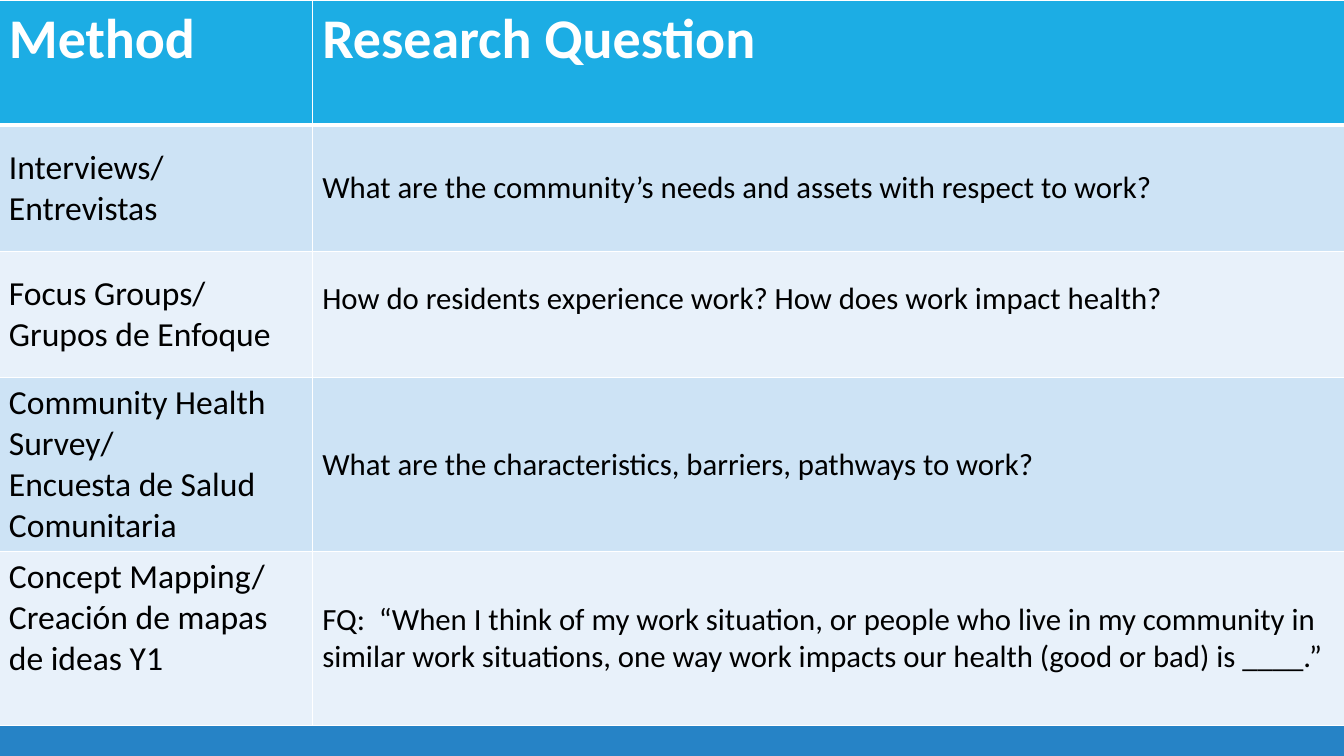
from pptx import Presentation
from pptx.dml.color import RGBColor
from pptx.enum.shapes import MSO_SHAPE
from pptx.enum.text import MSO_ANCHOR
from pptx.oxml.ns import qn
from pptx.util import Cm, Pt
from lxml import etree

RECTANGLE = MSO_SHAPE.RECTANGLE
TOP, MIDDLE = MSO_ANCHOR.TOP, MSO_ANCHOR.MIDDLE

# Content: method and research question
HEADINGS = ("Method", "Research Question")
STUDIES = [
    ("Interviews/\nEntrevistas",
     "What are the community’s needs and assets with respect to work?"),
    ("Focus Groups/\nGrupos de Enfoque",
     "How do residents experience work? How does work impact health?"),
    ("Community Health Survey/\nEncuesta de Salud Comunitaria",
     "What are the characteristics, barriers, pathways to work?"),
    ("Concept Mapping/\nCreación de mapas de ideas Y1",
     "FQ:  “When I think of my work situation, or people who live in my "
     "community in similar work situations, one way work impacts our health "
     "(good or bad) is ____.”"),
]

# Layout and style
SLIDE_WIDTH, SLIDE_HEIGHT = 33.87, 19.05
FOOTER_HEIGHT = 1.27
TABLE_LEFT = -0.03
COLUMN_WIDTHS = (7.9, 26.04)
ROW_HEIGHTS = (3.15, 3.18, 3.18, 4.39, 4.39)
RAISED_CELLS = {(2, 1): 0.92, (4, 0): 1.16}  # bottom margins that lift the text
FONT = "Calibri"
HEADING_SIZE, BODY_SIZES = 40, (24, 22)
WHITE, BLACK = "FFFFFF", "000000"
HEADING_FILL, FOOTER_FILL = "1CADE4", "2683C6"
BAND_FILLS = ("CDE3F5", "E8F1FA")


def paint(fill, color):
    fill.solid()
    fill.fore_color.rgb = RGBColor.from_string(color)


def set_borders(cell, bottom_width):
    properties = cell._tc.get_or_add_tcPr()
    widths = {"a:lnL": 1, "a:lnR": 1, "a:lnT": 1, "a:lnB": bottom_width}
    for position, (tag, width) in enumerate(widths.items()):
        line = etree.Element(qn(tag), w=str(Pt(width)))
        solid = etree.SubElement(line, qn("a:solidFill"))
        etree.SubElement(solid, qn("a:srgbClr"), val=WHITE)
        properties.insert(position, line)


def fill_cell(cell, text, size, color, bold, anchor, background):
    cell.text_frame.text = text
    cell.vertical_anchor = anchor
    paint(cell.fill, background)
    for para in cell.text_frame.paragraphs:
        for span in para.runs:
            span.font.name = FONT
            span.font.size = Pt(size)
            span.font.bold = bold
            paint(span.font.fill, color)


def add_footer(page):
    footer = page.shapes.add_shape(
        RECTANGLE, 0, Cm(SLIDE_HEIGHT - FOOTER_HEIGHT),
        Cm(SLIDE_WIDTH), Cm(FOOTER_HEIGHT))
    footer.shadow.inherit = False
    paint(footer.fill, FOOTER_FILL)
    footer.line.fill.background()


def add_methods_table(page):
    rows = [HEADINGS] + STUDIES
    table = page.shapes.add_table(
        len(rows), len(HEADINGS), Cm(TABLE_LEFT), 0,
        Cm(sum(COLUMN_WIDTHS)), Cm(sum(ROW_HEIGHTS))).table
    for column, width in zip(table.columns, COLUMN_WIDTHS):
        column.width = Cm(width)
    for row, height in zip(table.rows, ROW_HEIGHTS):
        row.height = Cm(height)

    for row_number, texts in enumerate(rows):
        for column_number, text in enumerate(texts):
            cell = table.cell(row_number, column_number)
            if row_number == 0:
                fill_cell(cell, text, HEADING_SIZE, WHITE, True, TOP, HEADING_FILL)
            else:
                fill_cell(cell, text, BODY_SIZES[column_number], BLACK, False,
                          MIDDLE, BAND_FILLS[(row_number - 1) % 2])
            set_borders(cell, 3 if row_number == 0 else 1)

    for (row_number, column_number), margin in RAISED_CELLS.items():
        table.cell(row_number, column_number).margin_bottom = Cm(margin)


def main():
    deck = Presentation()
    deck.slide_width, deck.slide_height = Cm(SLIDE_WIDTH), Cm(SLIDE_HEIGHT)
    page = deck.slides.add_slide(deck.slide_layouts[6])
    add_footer(page)
    add_methods_table(page)
    deck.save("out.pptx")


if __name__ == "__main__":
    main()
